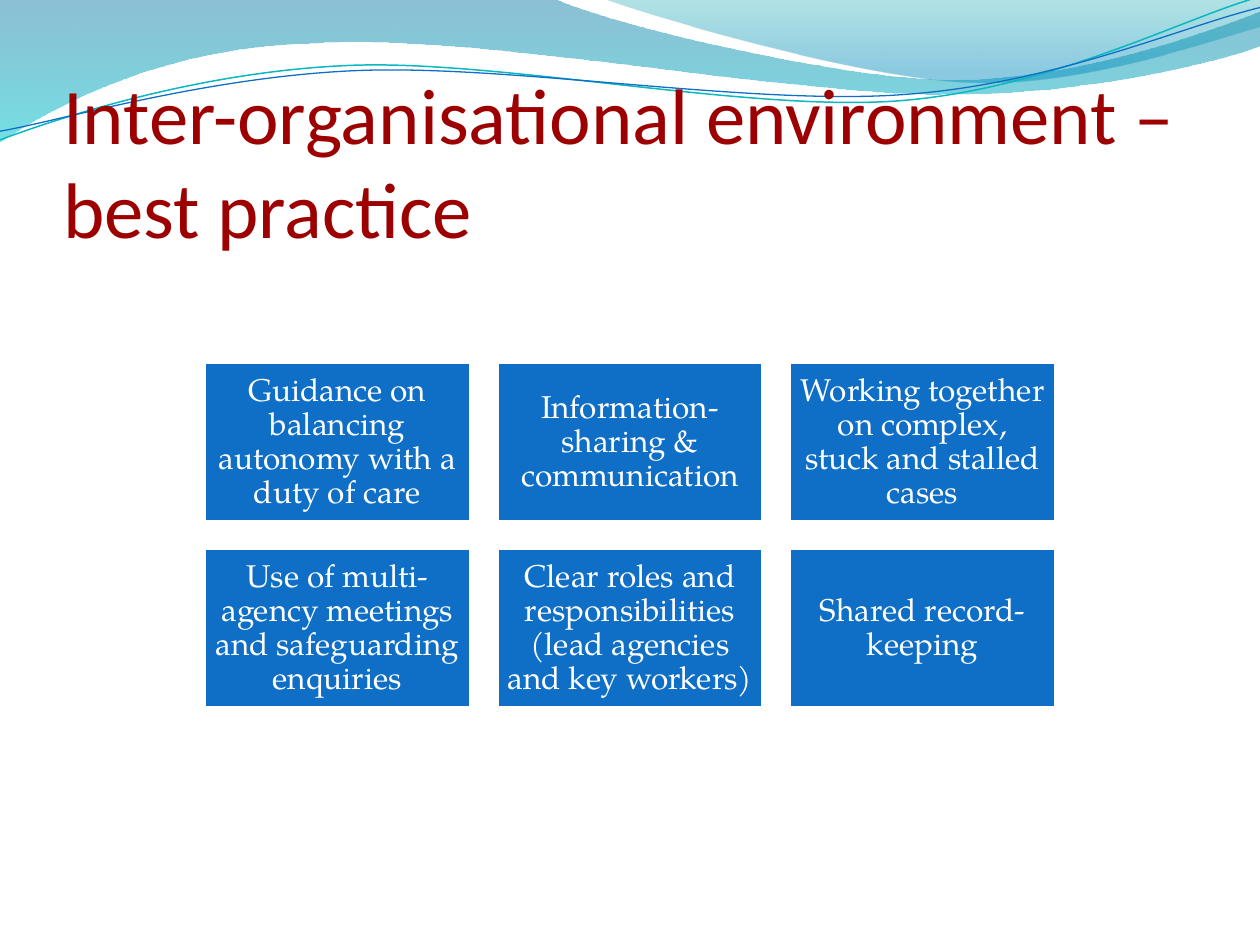
from lxml.etree import SubElement
from pptx import Presentation
from pptx.dml.color import RGBColor
from pptx.enum.shapes import MSO_SHAPE
from pptx.enum.text import MSO_ANCHOR, MSO_AUTO_SIZE, PP_ALIGN
from pptx.oxml.ns import qn
from pptx.util import Pt

COLORS = {
    "title": "9C0001", "box": "0F6FC6", "white": "FFFFFF", "teal_line": "0AB8BF",
    "deep_blue": "0074A1", "turquoise": "00C6CF", "sea_green": "00A1A9", "sky": "008BBF",
}


def color(name):
    return RGBColor.from_string(COLORS[name])


def draw_curve(shapes, start, segments, close):
    builder = shapes.build_freeform(Pt(start[0]), Pt(start[1]), scale=1.0)
    builder.add_line_segments(
        [(Pt(x), Pt(y)) for segment in segments for x, y in segment], close=close)
    curve = builder.convert_to_shape()
    curve.shadow.inherit = False
    line_steps = iter(list(curve.element.iter(qn("a:lnTo"))))
    for segment in segments:
        steps = [next(line_steps) for point in segment]
        if len(steps) == 3:
            bezier = steps[0].makeelement(qn("a:cubicBezTo"))
            steps[0].addprevious(bezier)
            for step in steps:
                bezier.append(step[0])
                step.getparent().remove(step)
    return curve


prs = Presentation()
prs.slide_width, prs.slide_height = Pt(720), Pt(540)
slide = prs.slides.add_slide(prs.slide_layouts[5])

waves = [
    ((0, 0), [
        [(316.8, -0.7)],
        [(342.7, 12.2), (478.1, 45.4), (545.8, 45.4)],
        [(614.2, 45.4), (689.8, 18.7), (720, 6.5)],
        [(720.7, 25.9)],
        [(707.8, 31.7), (626.4, 54.7), (537.1, 54)],
        [(447.8, 54), (275, 20.2), (185, 24.5)],
        [(92.9, 25.9), (33.1, 59.8), (-0.7, 81.4)],
    ], [(0, "deep_blue", 45), (1, "turquoise", 55)]),
    ((344.9, -0.7), [
        [(366.5, 7.9), (491, 44.6), (553.7, 46.8)],
        [(616.3, 49.7), (691.9, 23), (720, 15.1)],
        [(720, 0)],
    ], [(0, "sea_green", 30), (0.8, "sky", 45)]),
]
for start, segments, stops in waves:
    wave = draw_curve(slide.shapes, start, segments, True)
    wave.line.fill.background()
    wave.fill.gradient()
    wave.fill.gradient_angle = 270
    for stop, (position, name, opacity) in zip(wave.fill.gradient_stops, stops):
        stop.position = position
        stop.color.rgb = color(name)
    stop_colors = wave.element.spPr.iter(qn("a:srgbClr"))
    for stop_color, (position, name, opacity) in zip(stop_colors, stops):
        SubElement(stop_color, qn("a:alpha")).set("val", str(opacity * 1000))

ripples = [
    ((-1.4, 63), [
        [(33.8, 51.7), (114.1, 29.4), (199.8, 29.9)],
        [(284.9, 30.3), (425.8, 67.3), (512.4, 64.9)],
        [(599, 62.4), (676.5, 25.7), (720.2, 15.5)],
    ], "teal_line", 0.85),
    ((-1.1, 58), [
        [(32.9, 53.8), (118.3, 32.5), (204.1, 33)],
        [(290.6, 33.4), (428.9, 63.8), (515.5, 61.4)],
        [(601.3, 59.6), (676.3, 30), (721.4, 21.3)],
    ], "box", 0.75),
]
for start, segments, name, width in ripples:
    ripple = draw_curve(slide.shapes, start, segments, False)
    ripple.rotation = 357.3
    ripple.fill.background()
    ripple.line.color.rgb = color(name)
    ripple.line.width = Pt(width)

title = slide.shapes.title
title.element.getparent().append(title.element)
title.left, title.top, title.width, title.height = Pt(36), Pt(55.4), Pt(648), Pt(90)
heading = title.text_frame
heading.text = "Inter-organisational environment – best practice"
heading.word_wrap = True
heading.auto_size = MSO_AUTO_SIZE.NONE
heading.vertical_anchor = MSO_ANCHOR.BOTTOM
heading.margin_left = heading.margin_right = heading.margin_bottom = 0
heading.margin_top = Pt(3.6)
heading.paragraphs[0].alignment = PP_ALIGN.LEFT
heading_font = heading.paragraphs[0].runs[0].font
heading_font.name, heading_font.size = "Calibri", Pt(45)
heading_font.color.rgb = color("title")

practices = [
    "Guidance on balancing autonomy with a duty of care",
    "Information-sharing & communication",
    "Working together on complex, stuck and stalled cases",
    "Use of multi-agency meetings and safeguarding enquiries",
    "Clear roles and responsibilities (lead agencies and key workers)",
    "Shared record-keeping",
]
box_width, box_height, gap = 152, 91, 15.2
for index, practice in enumerate(practices):
    row, column = divmod(index, 3)
    box = slide.shapes.add_shape(
        MSO_SHAPE.RECTANGLE,
        Pt(116.8 + column * (box_width + gap)), Pt(207.3 + row * (box_height + gap)),
        Pt(box_width), Pt(box_height))
    box.shadow.inherit = False
    box.fill.solid()
    box.fill.fore_color.rgb = color("box")
    box.line.color.rgb = color("white")
    box.line.width = Pt(2)
    frame = box.text_frame
    frame.text = practice
    frame.word_wrap = True
    frame.vertical_anchor = MSO_ANCHOR.MIDDLE
    frame.margin_left = frame.margin_right = frame.margin_top = frame.margin_bottom = Pt(5)
    paragraph = frame.paragraphs[0]
    paragraph.alignment = PP_ALIGN.CENTER
    paragraph.line_spacing = 0.9
    font = paragraph.runs[0].font
    font.name, font.size = "TeX Gyre Pagella", Pt(18)
    font.color.rgb = color("white")

prs.save("out.pptx")
